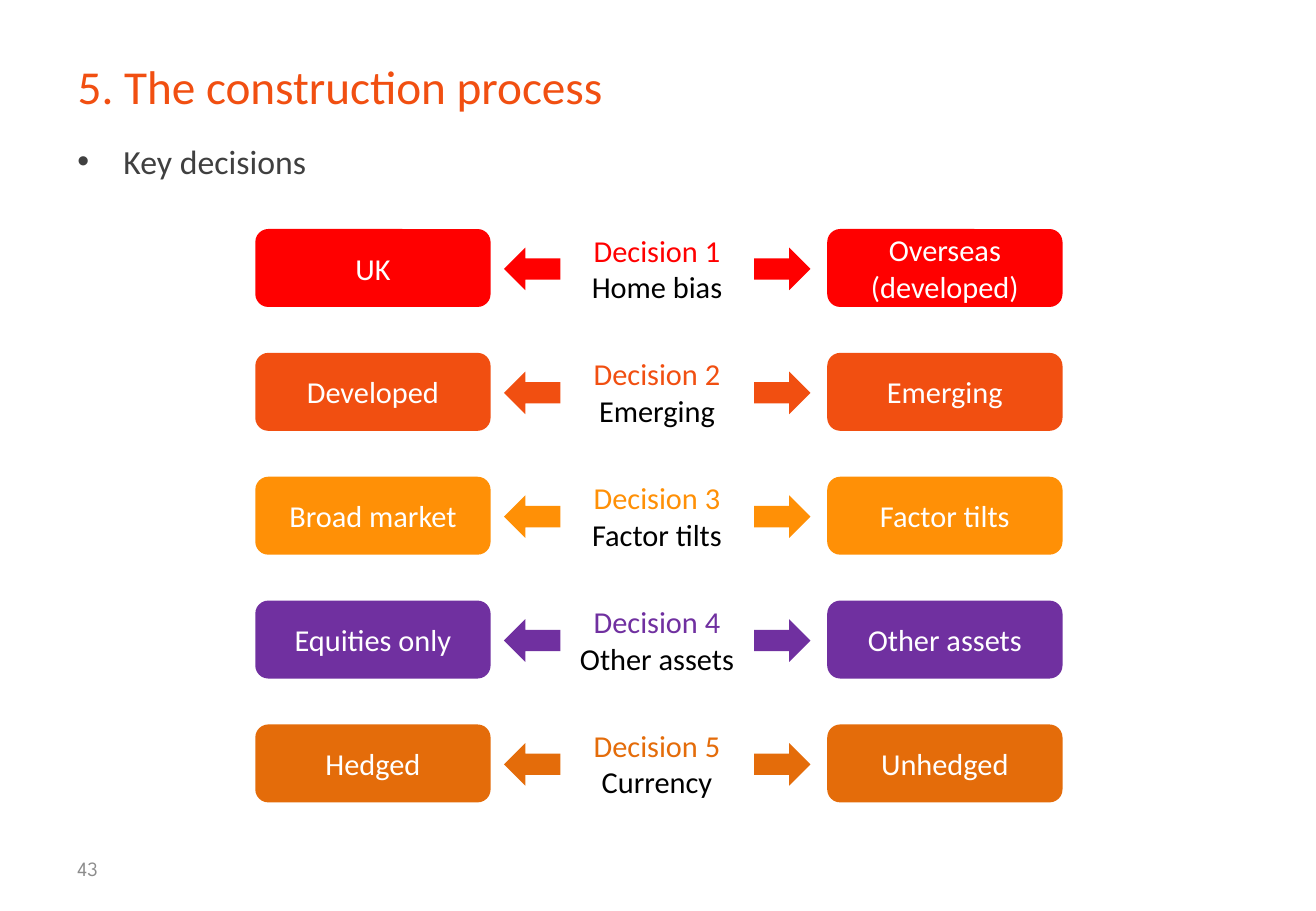
import pptx
import pptx.util
import pptx.dml.color
import pptx.enum.shapes
import pptx.enum.text
import lxml.etree

Cm = pptx.util.Cm
Pt = pptx.util.Pt
RGBColor = pptx.dml.color.RGBColor
Shape = pptx.enum.shapes.MSO_SHAPE
Align = pptx.enum.text.PP_ALIGN
Anchor = pptx.enum.text.MSO_ANCHOR

RED = RGBColor(0xFF, 0x00, 0x00)
ORANGE = RGBColor(0xF1, 0x4F, 0x11)
AMBER = RGBColor(0xFF, 0x90, 0x06)
PURPLE = RGBColor(0x70, 0x30, 0xA0)
RUST = RGBColor(0xE4, 0x6C, 0x0A)
WHITE = RGBColor(0xFF, 0xFF, 0xFF)
BLACK = RGBColor(0x00, 0x00, 0x00)
DARK = RGBColor(0x40, 0x40, 0x40)
GREY = RGBColor(0x8C, 0x8C, 0x8C)

ROWS = [
    ("UK", "Home bias", "Overseas (developed)", RED),
    ("Developed", "Emerging", "Emerging", ORANGE),
    ("Broad market", "Factor tilts", "Factor tilts", AMBER),
    ("Equities only", "Other assets", "Other assets", PURPLE),
    ("Hedged", "Currency", "Unhedged", RUST),
]


def style(font, size, color, name="Calibri"):
    font.size = Pt(size)
    font.color.rgb = color
    font.name = name


def block(kind, left, top, width, height, color):
    shape = slide.shapes.add_shape(kind, Cm(left), Cm(top), Cm(width), Cm(height))
    shape.shadow.inherit = False
    shape.fill.solid()
    shape.fill.fore_color.rgb = color
    shape.line.fill.background()
    return shape


deck = pptx.Presentation()
deck.slide_width = Cm(27.52)
deck.slide_height = Cm(19.05)
slide = deck.slides.add_slide(deck.slide_layouts[5])

title = slide.shapes.title
title.left, title.top, title.width, title.height = Cm(1.37), Cm(0.76), Cm(24.77), Cm(2.06)
title.text_frame.text = "5. The construction process"
title.text_frame.vertical_anchor = Anchor.MIDDLE
head = title.text_frame.paragraphs[0]
head.alignment = Align.LEFT
style(head.font, 28, ORANGE)

body = slide.shapes.add_textbox(Cm(1.37), Cm(2.82), Cm(24.77), Cm(1.3))
body.text_frame.word_wrap = True
point = body.text_frame.paragraphs[0]
point.text = "Key decisions"
point.space_before = Pt(4)
style(point.font, 20, DARK)
props = point._p.get_or_add_pPr()
props.set("marL", str(Cm(0.96)))
props.set("indent", str(-Cm(0.96)))
space = "{http://schemas.openxmlformats.org/drawingml/2006/main}"
face = lxml.etree.Element(space + "buFont", typeface="Arial")
mark = lxml.etree.Element(space + "buChar", char="•")
props.find(space + "spcBef").addnext(face)
face.addnext(mark)

for row, (left, theme, right, color) in enumerate(ROWS):
    top = 4.79 + row * 2.59
    block(Shape.RIGHT_ARROW, 15.77, top + 0.39, 1.18, 0.89, color)
    block(Shape.LEFT_ARROW, 10.54, top + 0.39, 1.18, 0.89, color)

    label = slide.shapes.add_textbox(Cm(11.74), Cm(top - 0.07), Cm(4), Cm(1.8))
    label.text_frame.word_wrap = False
    label.text_frame.text = f"Decision {row + 1}\n{theme}"
    for line, ink in zip(label.text_frame.paragraphs, (color, BLACK)):
        line.alignment = Align.CENTER
        style(line.font, 18, ink)

    for text, start in ((left, 5.34), (right, 17.3)):
        box = block(Shape.ROUNDED_RECTANGLE, start, top, 4.92, 1.63, color)
        box.text_frame.text = text
        box.text_frame.vertical_anchor = Anchor.MIDDLE
        line = box.text_frame.paragraphs[0]
        line.alignment = Align.CENTER
        style(line.font, 18, WHITE)

page = slide.shapes.add_textbox(Cm(1.37), Cm(17.65), Cm(4.8), Cm(1.02))
page.text_frame.text = "43"
page.text_frame.vertical_anchor = Anchor.MIDDLE
style(page.text_frame.paragraphs[0].font, 12, GREY, "League Spartan")

deck.save("out.pptx")
